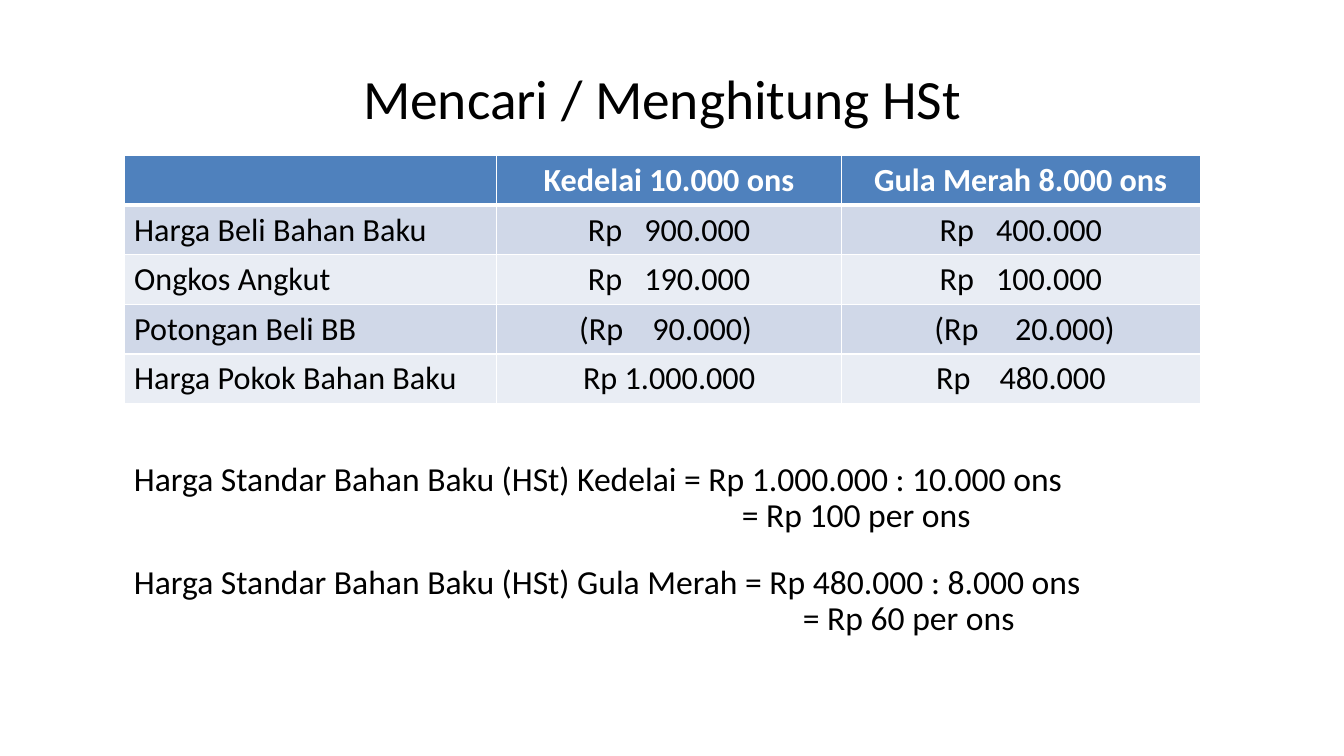
from lxml.etree import SubElement
from pptx import Presentation
from pptx.dml.color import RGBColor
from pptx.enum.text import MSO_ANCHOR, PP_ALIGN
from pptx.oxml.ns import qn
from pptx.util import Pt

BLACK = RGBColor(0x00, 0x00, 0x00)
WHITE = RGBColor(0xFF, 0xFF, 0xFF)
HEADER_BLUE = RGBColor(0x4F, 0x81, 0xBD)
BAND_DARK = RGBColor(0xD0, 0xD8, 0xE8)
BAND_LIGHT = RGBColor(0xE9, 0xED, 0xF4)

LEFT = 88.56
COLUMN_WIDTHS = (266.4, 246.2, 256.3)
ROW_HEIGHT = 35.4
HEADINGS = ("", "Kedelai 10.000 ons", "Gula Merah 8.000 ons")
COSTS = (
    ("Harga Beli Bahan Baku", ("Rp", 10.4, "900.000"), ("Rp", 10.4, "400.000")),
    ("Ongkos Angkut", ("Rp", 10.4, "190.000"), ("Rp", 10.4, "100.000")),
    ("Potongan Beli BB", ("(Rp", 15.6, "90.000) "), (" (Rp", 20.8, "20.000)")),
    ("Harga Pokok Bahan Baku", ("Rp", 0, "1.000.000"), ("Rp", 15.6, "480.000")),
)
CALCULATIONS = (
    (326.9, "Harga Standar Bahan Baku (HSt) Kedelai = Rp 1.000.000 : 10.000 ons",
     "= Rp 100 per ons", 434.3),
    (400.3, "Harga Standar Bahan Baku (HSt) Gula Merah = Rp 480.000 : 8.000 ons",
     "= Rp 60 per ons", 477.9),
)


class CostSlide:
    font = "Calibri"
    title_size = 39.6
    table_size = 23
    body_size = 24

    def __init__(self, presentation):
        self.slide = presentation.slides.add_slide(presentation.slide_layouts[6])

    def run(self, paragraph, wording, size, color=BLACK, bold=False, spacing=0):
        run = paragraph.add_run()
        run.text = wording
        run.font.name = self.font
        run.font.size = Pt(size)
        run.font.bold = bold
        run.font.color.rgb = color
        if spacing:
            run.font._element.set("spc", str(round(spacing * 100)))

    def frame(self, top, width, height):
        box = self.slide.shapes.add_textbox(Pt(LEFT), Pt(top), Pt(width), Pt(height))
        box.text_frame.word_wrap = True
        return box.text_frame

    def title(self, wording):
        frame = self.frame(44.6, sum(COLUMN_WIDTHS), 49.7)
        frame.vertical_anchor = MSO_ANCHOR.MIDDLE
        frame.paragraphs[0].alignment = PP_ALIGN.CENTER
        self.run(frame.paragraphs[0], wording, self.title_size)

    def calculation(self, top, formula, result, indent):
        frame = self.frame(top, 758.2, 59.8)
        answer = frame.add_paragraph()
        answer._p.get_or_add_pPr().set("marL", str(Pt(indent)))
        for paragraph, wording in zip(frame.paragraphs, (formula, result)):
            paragraph.line_spacing = 0.9
            self.run(paragraph, wording, self.body_size)

    def borders(self, cell, top, bottom):
        properties = cell._tc.get_or_add_tcPr()
        sides = (("a:lnL", 1), ("a:lnR", 1), ("a:lnT", top), ("a:lnB", bottom))
        for position, (side, width) in enumerate(sides):
            line = SubElement(properties, qn(side), w=str(Pt(width)))
            fill = SubElement(line, qn("a:solidFill"))
            SubElement(fill, qn("a:srgbClr"), val=str(WHITE))
            properties.insert(position, line)

    def cell(self, cell, fill, top=1, bottom=1, centered=True):
        cell.fill.solid()
        cell.fill.fore_color.rgb = fill
        self.borders(cell, top, bottom)
        paragraph = cell.text_frame.paragraphs[0]
        paragraph.alignment = PP_ALIGN.CENTER if centered else PP_ALIGN.LEFT
        return paragraph

    def cost_table(self, top):
        row_count = len(COSTS) + 1
        table = self.slide.shapes.add_table(
            row_count, len(HEADINGS), Pt(LEFT), Pt(top),
            Pt(sum(COLUMN_WIDTHS)), Pt(ROW_HEIGHT * row_count)).table
        for column, width in zip(table.columns, COLUMN_WIDTHS):
            column.width = Pt(width)
        for row in table.rows:
            row.height = Pt(ROW_HEIGHT)
        for column, heading in enumerate(HEADINGS):
            paragraph = self.cell(table.cell(0, column), HEADER_BLUE, bottom=3)
            if heading:
                self.run(paragraph, heading, self.table_size, WHITE, bold=True)
        for row, (label, *amounts) in enumerate(COSTS, 1):
            band = BAND_DARK if row % 2 else BAND_LIGHT
            edge = 3 if row == 1 else 1
            paragraph = self.cell(table.cell(row, 0), band, edge, centered=False)
            self.run(paragraph, label, self.table_size)
            for column, (currency, gap, amount) in enumerate(amounts, 1):
                paragraph = self.cell(table.cell(row, column), band, edge)
                self.run(paragraph, currency, self.table_size)
                self.run(paragraph, " ", self.table_size, spacing=gap)
                self.run(paragraph, amount, self.table_size)


def main():
    presentation = Presentation()
    presentation.slide_width = Pt(960)
    presentation.slide_height = Pt(540)
    page = CostSlide(presentation)
    page.title("Mencari / Menghitung HSt")
    page.cost_table(111.3)
    for calculation in CALCULATIONS:
        page.calculation(*calculation)
    presentation.save("out.pptx")


if __name__ == "__main__":
    main()
